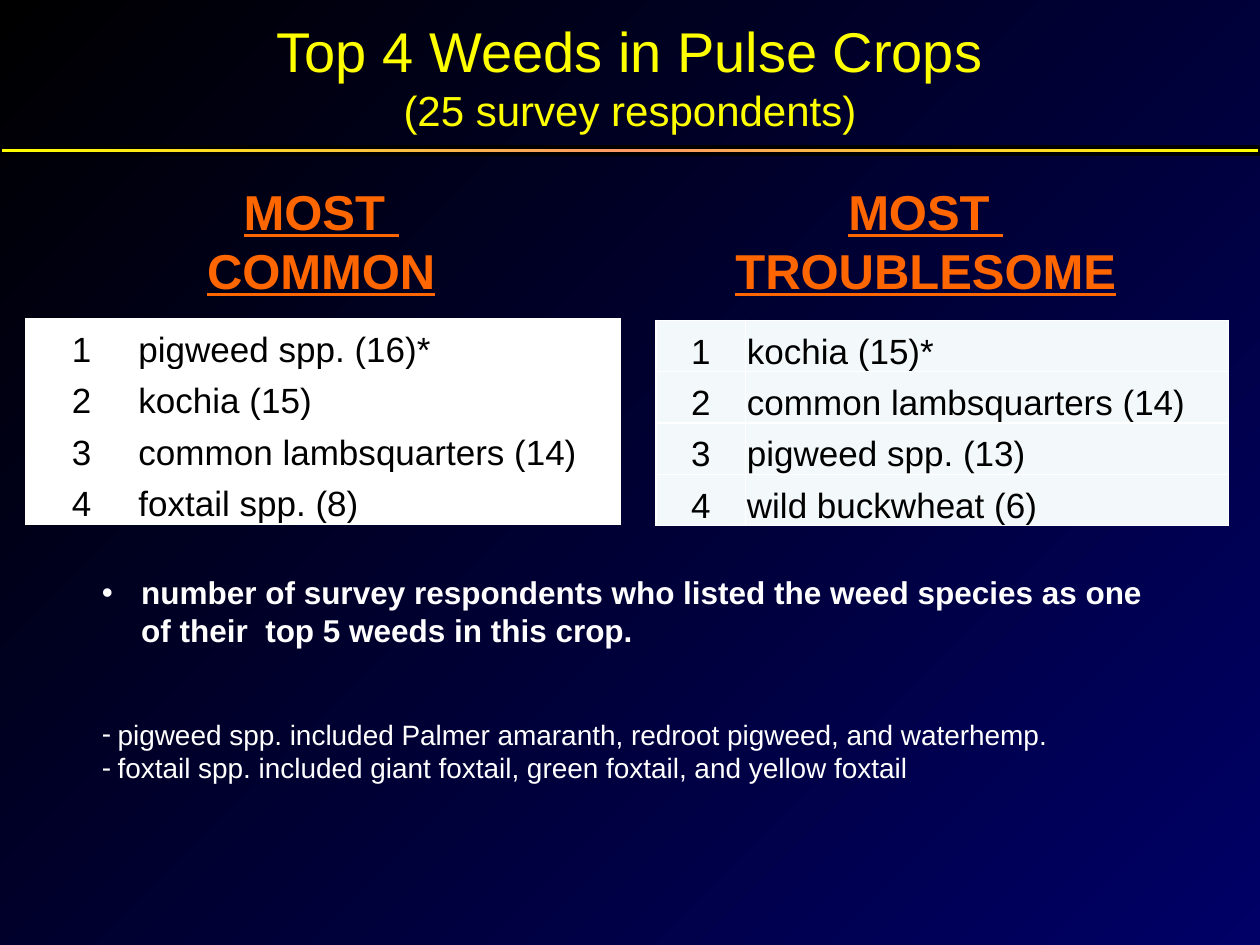
import copy
from dataclasses import dataclass

import pptx
import pptx.dml.color
import pptx.enum.shapes
import pptx.enum.text
import pptx.oxml
import pptx.oxml.ns
import pptx.util

Pt = pptx.util.Pt
Align = pptx.enum.text.PP_ALIGN
Anchor = pptx.enum.text.MSO_ANCHOR
Fit = pptx.enum.text.MSO_AUTO_SIZE
qn = pptx.oxml.ns.qn


@dataclass(frozen=True)
class Theme:
    font: str = "Arial"
    black: str = "000000"
    navy: str = "000066"
    yellow: str = "FFFF00"
    peach: str = "FF9966"
    orange: str = "FF6600"
    white: str = "FFFFFF"
    pale: str = "F3F9FA"
    title: int = 32
    sub: int = 24
    head: int = 28
    cell: int = 20
    note: int = 18
    small: int = 16


THEME = Theme()

COMMON = ["pigweed spp. (16)*", "kochia (15)", "common lambsquarters (14)", "foxtail spp. (8)"]
TROUBLE = ["kochia (15)*", "common lambsquarters (14)", "pigweed spp. (13)", "wild buckwheat (6)"]

# text, bullet, size, bold, indent, space before
NOTES = [
    ("number of survey respondents who listed the weed species as one of their  top 5 weeds in this crop.",
     "•", THEME.note, True, 22.5, 0),
    ("pigweed spp. included Palmer amaranth, redroot pigweed, and waterhemp.",
     "-", THEME.small, False, 9, 39),
    ("foxtail spp. included giant foxtail, green foxtail, and yellow foxtail",
     "-", THEME.small, False, 9, 0),
]


def rgb(code):
    return pptx.dml.color.RGBColor.from_string(code)


def place(shape, left, top, width, height):
    shape.left, shape.top = Pt(left), Pt(top)
    shape.width, shape.height = Pt(width), Pt(height)


def shade(fill, root, colors, angle):
    """Spread colors evenly; root is the element that holds the fill."""
    fill.gradient()
    fill.gradient_angle = angle
    stops = next(root.iter(qn("a:gsLst")))
    while len(stops) < len(colors):
        stops.append(copy.deepcopy(stops[-1]))
    for i, (stop, code) in enumerate(zip(fill.gradient_stops, colors)):
        stop.color.rgb = rgb(code)
        stop.position = i / (len(colors) - 1)


def write(para, text, size, color, bold=False, line=False, align=Align.LEFT):
    para.alignment = align
    para.space_before = Pt(0)
    run = para.add_run()
    run.text = text
    font = run.font
    font.name, font.size, font.bold = THEME.font, Pt(size), bold
    font.underline = line
    font.color.rgb = rgb(color)


def paras(frame, count):
    """Return count paragraphs of an empty frame."""
    return [frame.paragraphs[0]] + [frame.add_paragraph() for _ in range(count - 1)]


def bullet(para, mark, indent):
    props = para._p.get_or_add_pPr()
    props.set("marL", str(Pt(indent)))
    props.set("indent", str(-Pt(indent)))
    node = props.makeelement(qn("a:buChar"), {"char": mark})
    props.append(node)


def add_title(slide):
    title = slide.shapes.title
    place(title, 24, 0, 672, 86.4)
    frame = title.text_frame
    frame.auto_size = Fit.NONE
    frame.vertical_anchor = Anchor.MIDDLE
    rows = [("Top 4 Weeds in Pulse Crops", THEME.title), ("(25 survey respondents)", THEME.sub)]
    for para, (text, size) in zip(paras(frame, len(rows)), rows):
        write(para, text, size, THEME.yellow, align=Align.CENTER)


def add_rule(slide):
    bar = slide.shapes.add_shape(pptx.enum.shapes.MSO_SHAPE.RECTANGLE, Pt(0), Pt(84.2), Pt(720), Pt(3.6))
    bar.shadow.inherit = False
    shade(bar.fill, bar.element, [THEME.yellow, THEME.peach, THEME.yellow], 0)
    bar.line.color.rgb = rgb(THEME.black)
    bar.line.width = Pt(2.25)


def add_head(slide, left, width, words):
    box = slide.shapes.add_textbox(Pt(left), Pt(100), Pt(width), Pt(75))
    frame = box.text_frame
    frame.word_wrap = True
    for para, word in zip(paras(frame, len(words)), words):
        write(para, word, THEME.head, THEME.orange, True, True, Align.CENTER)


def edge(cell):
    """Draw a thin white border round a cell."""
    props = cell._tc.get_or_add_tcPr()
    for i, side in enumerate(("lnL", "lnR", "lnT", "lnB")):
        props.insert(i, pptx.oxml.parse_xml(
            f'<a:{side} {pptx.oxml.ns.nsdecls("a")} w="{Pt(1)}"><a:solidFill>'
            f'<a:srgbClr val="{THEME.white}"/></a:solidFill></a:{side}>'))


def add_ranks(slide, left, top, first, weeds, fill):
    """Add a ranked table whose number column is first points wide."""
    widths, high = (first, 275.8), 29.35
    grid = slide.shapes.add_table(len(weeds), 2, Pt(left), Pt(top),
                                  Pt(sum(widths)), Pt(high * len(weeds))).table
    grid.first_row = grid.horz_banding = False
    for col, width in zip(grid.columns, widths):
        col.width = Pt(width)
    for i, weed in enumerate(weeds):
        grid.rows[i].height = Pt(high)
        for j, (text, align) in enumerate([(str(i + 1), Align.CENTER), (weed, Align.LEFT)]):
            cell = grid.cell(i, j)
            cell.fill.solid()
            cell.fill.fore_color.rgb = rgb(fill)
            cell.vertical_anchor = Anchor.BOTTOM
            cell.margin_left = cell.margin_right = cell.margin_top = Pt(0.75)
            cell.margin_bottom = Pt(0)
            write(cell.text_frame.paragraphs[0], text, THEME.cell, THEME.black, align=align)
            edge(cell)


def add_notes(slide):
    body = slide.placeholders[1]
    place(body, 51, 324, 627, 131)
    frame = body.text_frame
    frame.auto_size = Fit.NONE
    for para, (text, mark, size, bold, indent, gap) in zip(paras(frame, len(NOTES)), NOTES):
        write(para, text, size, THEME.white, bold)
        para.space_before = Pt(gap)
        bullet(para, mark, indent)


def main():
    deck = pptx.Presentation()
    deck.slide_width, deck.slide_height = Pt(720), Pt(540)
    slide = deck.slides.add_slide(deck.slide_layouts[1])
    shade(slide.background.fill, slide.element, [THEME.black, THEME.navy], 315)
    add_title(slide)
    add_head(slide, 97, 173, ["MOST ", "COMMON"])
    add_head(slide, 408, 242, ["MOST ", "TROUBLESOME"])
    add_ranks(slide, 15, 182, 63.4, COMMON, THEME.white)
    add_ranks(slide, 375, 183, 51.1, TROUBLE, THEME.pale)
    add_notes(slide)
    add_rule(slide)
    deck.save("out.pptx")


if __name__ == "__main__":
    main()
